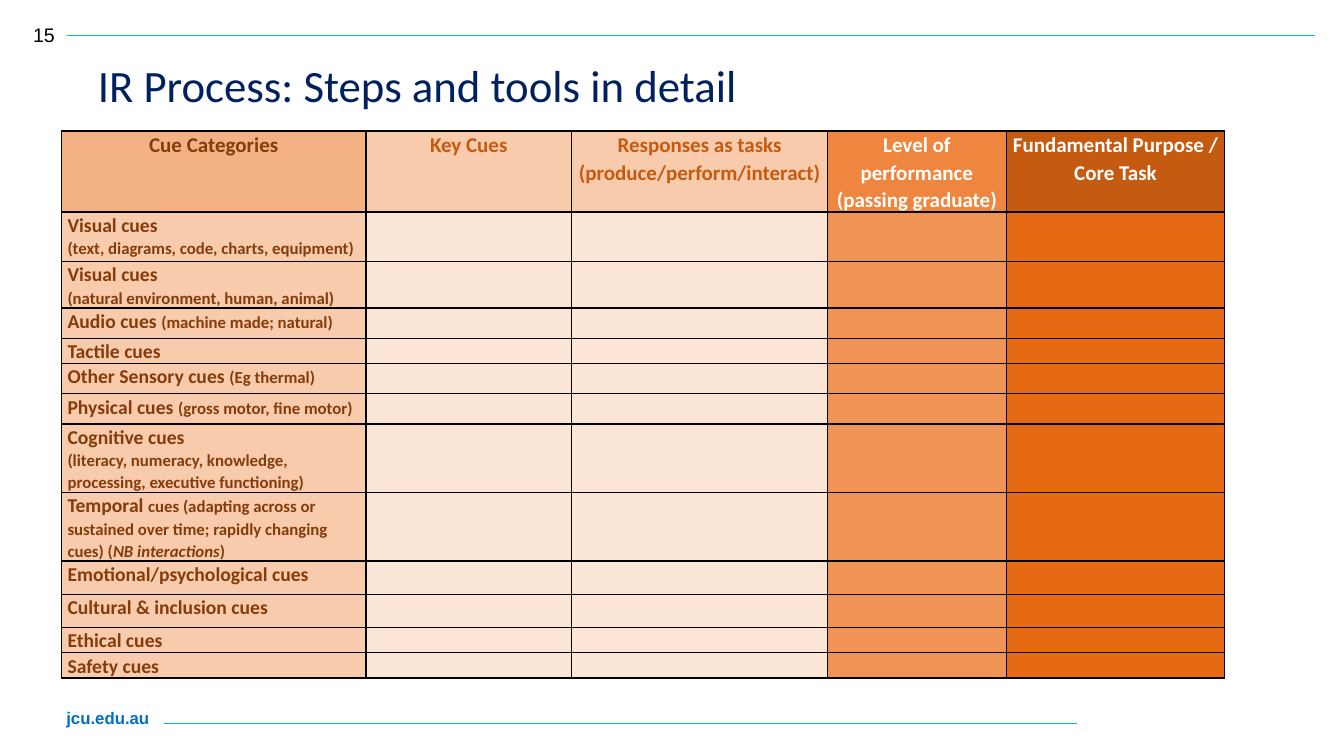
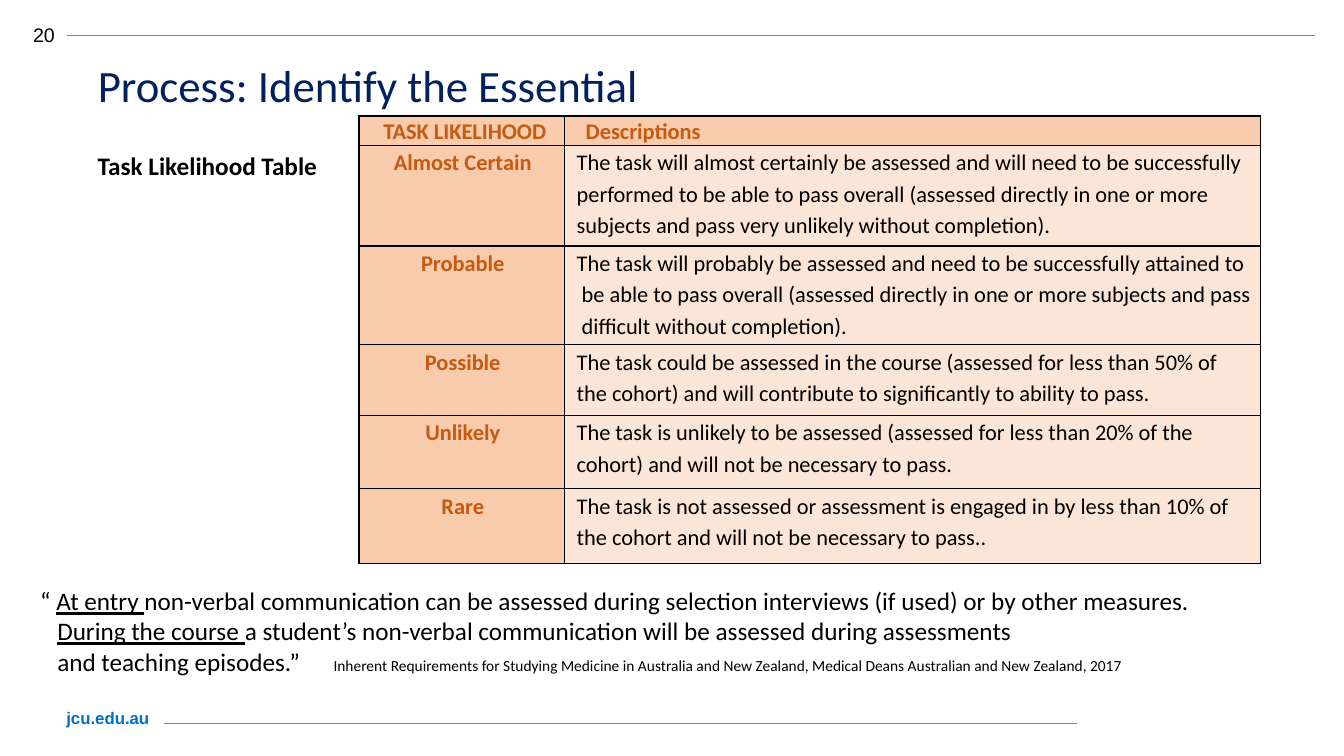
from copy import deepcopy

from lxml.etree import SubElement
from pptx import Presentation
from pptx.dml.color import RGBColor
from pptx.enum.shapes import MSO_CONNECTOR
from pptx.enum.text import MSO_ANCHOR, MSO_AUTO_SIZE, PP_ALIGN
from pptx.oxml.ns import qn
from pptx.util import Pt

EMU_PER_PX = 9144

BLACK = "000000"
NAVY = "002060"
LINK_BLUE = "0070C0"
RULE_BLUE = "00B0F0"
BROWN = "843C0B"
RUST = "C55A11"
WHITE = "FFFFFF"
PEACH = "F8CBAD"
PALE_PEACH = "FBE5D6"


def px(length):
    return length * EMU_PER_PX


def color(hex_string):
    return RGBColor.from_string(hex_string)


def add_text(paragraph, text, size=18, fill=BLACK, bold=False, italic=False,
             underline=False, font="Calibri"):
    for index, line in enumerate(text.split("\n")):
        if index:
            paragraph.add_line_break()
            line_break = paragraph._p.findall(qn("a:br"))[-1]
            line_break.append(deepcopy(run._r.rPr))
        run = paragraph.add_run()
        run.text = line
        run.font.name = font
        run.font.size = Pt(size)
        run.font.bold = bold
        run.font.italic = italic
        run.font.underline = underline
        run.font.color.rgb = color(fill)


def set_indent(paragraph, left, first=0):
    properties = paragraph._p.get_or_add_pPr()
    properties.set("marL", str(px(left)))
    properties.set("indent", str(px(first)))


class Deck:
    def __init__(self):
        self.presentation = Presentation()
        self.presentation.slide_width = px(1333)
        self.presentation.slide_height = px(750)
        self.slide = None

    def new_slide(self, number, title):
        layout = self.presentation.slide_layouts[5]
        self.slide = self.presentation.slides.add_slide(layout)
        self.text_box(56, 697, 123, 30, "jcu.edu.au", size=12, font="Arial",
                      fill=LINK_BLUE, bold=True)
        self.rule(163, 1068, 718)
        self.rule(66, 1304, 35)
        self.text_box(23, 18, 50, 37, str(number), size=14, font="Arial")
        self.title(title)

    def title(self, text):
        shape = self.slide.shapes.title
        shape.left, shape.top = px(87), px(52)
        shape.width, shape.height = px(1100), px(64)
        frame = shape.text_frame
        frame.auto_size = MSO_AUTO_SIZE.NONE
        frame.vertical_anchor = MSO_ANCHOR.TOP
        paragraph = frame.paragraphs[0]
        paragraph.alignment = PP_ALIGN.LEFT
        add_text(paragraph, text, size=32, fill=NAVY)

    def rule(self, start, end, top):
        line = self.slide.shapes.add_connector(
            MSO_CONNECTOR.STRAIGHT, px(start), px(top), px(end), px(top))
        line.line.color.rgb = color(RULE_BLUE)
        line.line.width = Pt(0.5)
        SubElement(line._element.spPr, qn("a:effectLst"))

    def text_box(self, left, top, width, height, text="", **text_format):
        shape = self.slide.shapes.add_textbox(px(left), px(top), px(width), px(height))
        frame = shape.text_frame
        frame.word_wrap = True
        if text:
            add_text(frame.paragraphs[0], text, **text_format)
        return frame

    def table(self, left, top, columns, rows):
        shape = self.slide.shapes.add_table(
            len(rows), len(columns), px(left), px(top), px(sum(columns)), px(sum(rows)))
        table = shape.table
        table.first_row = table.horz_banding = False
        for column, width in zip(table.columns, columns):
            column.width = px(width)
        for row, height in zip(table.rows, rows):
            row.height = px(height)
        return table

    def cell(self, cell, fill, runs=(), inset=0, spacing=1.07, centered=False,
             left=0, first=0):
        cell.margin_left = cell.margin_right = px(inset)
        cell.margin_top = cell.margin_bottom = 0
        for side in ("a:lnL", "a:lnR", "a:lnT", "a:lnB"):
            border = SubElement(cell._tc.get_or_add_tcPr(), qn(side), w=str(Pt(1)))
            solid = SubElement(border, qn("a:solidFill"))
            SubElement(solid, qn("a:srgbClr"), val=BLACK)
        cell.fill.solid()
        cell.fill.fore_color.rgb = color(fill)
        paragraph = cell.text_frame.paragraphs[0]
        if not runs:
            SubElement(paragraph._p, qn("a:endParaRPr"), sz="1000")
            return
        paragraph.line_spacing = spacing
        paragraph.alignment = PP_ALIGN.CENTER if centered else PP_ALIGN.LEFT
        set_indent(paragraph, left, first)
        for text, text_format in runs:
            add_text(paragraph, text, **text_format)


def build_cue_slide(deck):
    deck.new_slide(15, "IR Process: Steps and tools in detail")
    headers = [
        ("Cue Categories", BROWN, "F4B183"),
        ("Key Cues", RUST, PEACH),
        ("Responses as tasks (produce/perform/interact)", RUST, PEACH),
        ("Level of performance (passing graduate)", WHITE, "EE8640"),
        ("Fundamental Purpose / Core Task", WHITE, RUST),
    ]
    name = {"size": 14, "fill": BROWN, "bold": True}
    detail = {**name, "size": 12}
    cues = [
        (49, [("Visual cues\n", name),
              ("(text, diagrams, code, charts, equipment)", detail)]),
        (46, [("Visual cues\n", name),
              ("(natural environment, human, animal)", detail)]),
        (30, [("Audio cues ", name), ("(machine made; natural)", detail)]),
        (25, [("Tactile cues", name)]),
        (30, [("Other Sensory cues ", name), ("(Eg thermal)", detail)]),
        (30, [("Physical cues ", name), ("(gross motor, fine motor)", detail)]),
        (68, [("Cognitive cues\n", name),
              ("(literacy, numeracy, knowledge, processing, executive functioning)",
               detail)]),
        (68, [("Temporal ", name),
              ("cues (adapting across or sustained over time; rapidly changing cues) (",
               detail),
              ("NB interactions", {**detail, "italic": True}), (")", detail)]),
        (33, [("Emotional/psychological cues", name)]),
        (33, [("Cultural & inclusion cues", name)]),
        (25, [("Ethical cues", name)]),
        (25, [("Safety cues", name)]),
    ]
    column_fills = [PALE_PEACH, PALE_PEACH, "F09456", "E66914"]
    table = deck.table(61, 130, [302, 204, 254, 177, 217],
                       [79] + [height for height, _ in cues])
    for column, (text, text_color, fill) in enumerate(headers):
        runs = [(text, {"size": 15, "fill": text_color, "bold": True})]
        deck.cell(table.cell(0, column), fill, runs, inset=6, centered=True)
    for row, (_, runs) in enumerate(cues, 1):
        deck.cell(table.cell(row, 0), PEACH, runs, inset=6)
        for column, fill in enumerate(column_fills, 1):
            deck.cell(table.cell(row, column), fill)


def build_likelihood_slide(deck):
    deck.new_slide(20, "Process: Identify the Essential")
    likelihoods = [
        (100, "Almost Certain", 0,
         "The task will almost certainly be assessed and will need to be successfully\n"
         "performed to be able to pass overall (assessed directly in one or more\n"
         "subjects and pass very unlikely without completion)."),
        (98, "Probable", 5,
         "The task will probably be assessed and need to be successfully attained to\n"
         "be able to pass overall (assessed directly in one or more subjects and pass\n"
         "difficult without completion)."),
        (70, "Possible", 0,
         "The task could be assessed in the course (assessed for less than 50% of\n"
         "the cohort) and will contribute to significantly to ability to pass."),
        (73, "Unlikely", 0,
         "The task is unlikely to be assessed (assessed for less than 20% of the\n"
         "cohort) and will not be necessary to pass."),
        (74, "Rare", 0,
         "The task is not assessed or assessment is engaged in by less than 10% of\n"
         "the cohort and will not be necessary to pass.."),
    ]
    label = {"size": 16, "fill": RUST, "bold": True}
    table = deck.table(356, 115, [204, 690], [29] + [entry[0] for entry in likelihoods])
    deck.cell(table.cell(0, 0), PEACH, [("TASK LIKELIHOOD", label)],
              centered=True, left=6)
    deck.cell(table.cell(0, 1), PEACH, [("Descriptions", label)], left=21)
    for row, (_, likelihood, hanging, description) in enumerate(likelihoods, 1):
        deck.cell(table.cell(row, 0), PEACH, [(likelihood, label)],
                  spacing=1.15, centered=True, left=2)
        deck.cell(table.cell(row, 1), PALE_PEACH, [(description, {"size": 16})],
                  spacing=1.15, left=12 + hanging, first=-hanging)

    deck.text_box(87, 144, 260, 40, "Task Likelihood Table", bold=True)
    quote = deck.text_box(30, 576, 1200, 102)
    entry = quote.paragraphs[0]
    add_text(entry, "“ ")
    add_text(entry, "At entry ", underline=True)
    add_text(entry, "non-verbal communication can be assessed during selection "
                    "interviews (if used) or by other measures.")
    course = quote.add_paragraph()
    set_indent(course, 17)
    add_text(course, "During the course ", underline=True)
    add_text(course, "a student’s non-verbal communication will be assessed during "
                     "assessments\nand teaching episodes.”")
    deck.text_box(321, 646, 840, 29,
                  "Inherent Requirements for Studying Medicine in Australia and New "
                  "Zealand, Medical Deans Australian and New Zealand, 2017", size=11)


def main():
    deck = Deck()
    build_cue_slide(deck)
    build_likelihood_slide(deck)
    deck.presentation.save("out.pptx")


if __name__ == "__main__":
    main()
